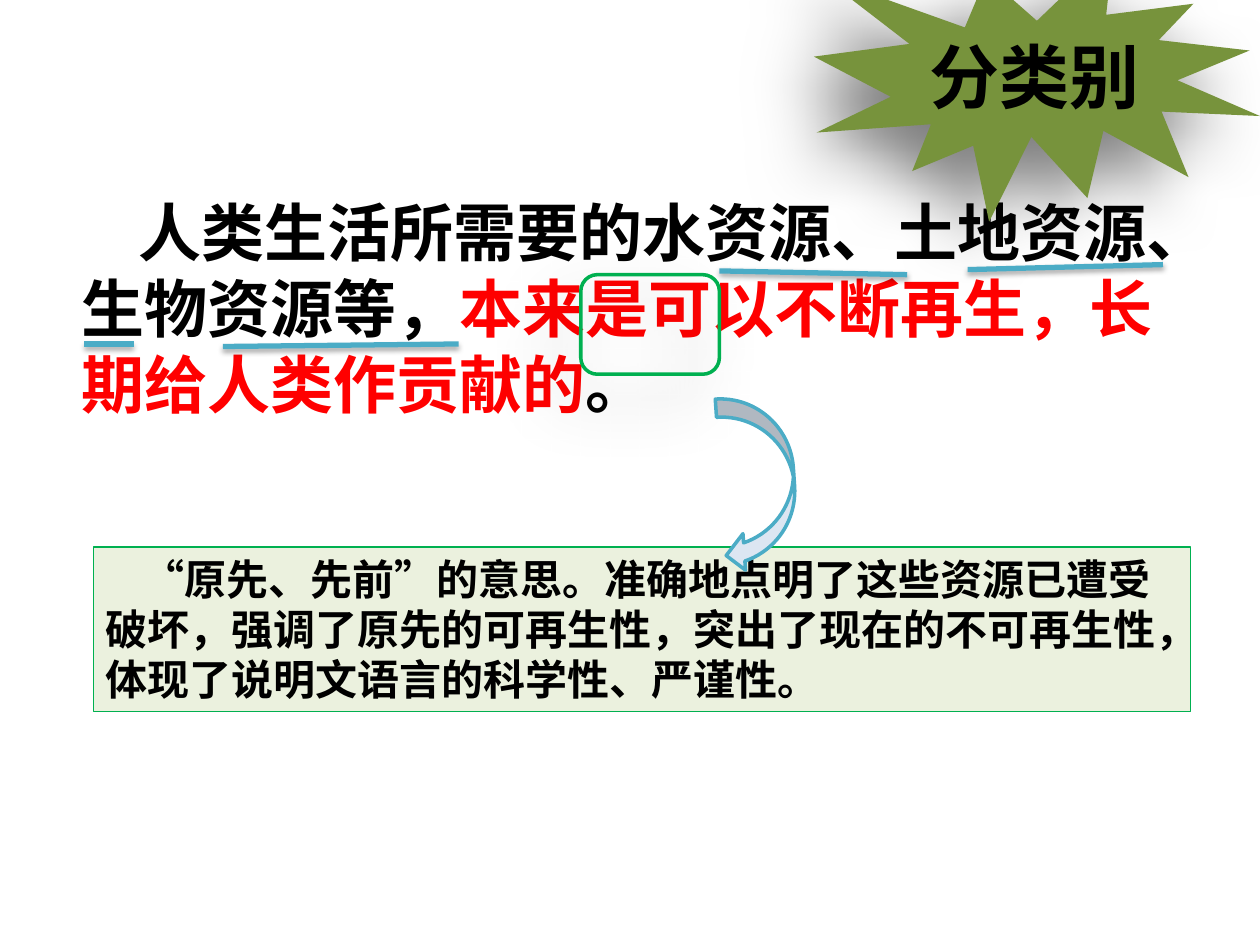
import pptx
import pptx.dml.color
import pptx.enum.lang
import pptx.enum.shapes
import pptx.enum.text
import pptx.oxml
import pptx.oxml.ns
import pptx.util

Inches = pptx.util.Inches
Pt = pptx.util.Pt
RGB = pptx.dml.color.RGBColor
Shape = pptx.enum.shapes.MSO_SHAPE
Align = pptx.enum.text.PP_ALIGN
Anchor = pptx.enum.text.MSO_ANCHOR
qn = pptx.oxml.ns.qn

BLACK = RGB(0x00, 0x00, 0x00)
RED = RGB(0xFF, 0x00, 0x00)
GREEN = RGB(0x00, 0xB0, 0x50)
OLIVE = RGB(0x77, 0x93, 0x3C)
PALE = RGB(0xEB, 0xF1, 0xDE)
TEAL = RGB(0x4B, 0xAC, 0xC6)
ICE = RGB(0xDC, 0xE6, 0xF2)

# Shadows: opacity in percent, blur and distance in points, angle in degrees
DEEP = (50, 35, 20, 135)
SOFT = (35, 3.1, 1.8, 90)


class Deck:
    font = "Noto Sans CJK SC"

    def __init__(self, slide):
        self.slide = slide

    def shade(self, item, look=None):
        """Replace the theme shadow with the given one, or with none."""
        props = item._element.spPr
        for old in props.findall(qn("a:effectLst")):
            props.remove(old)
        effects = pptx.oxml.parse_xml(
            "<a:effectLst %s/>" % pptx.oxml.ns.nsdecls("a"))
        props.append(effects)
        if look:
            alpha, blur, dist, angle = look
            effects.append(pptx.oxml.parse_xml(
                '<a:outerShdw %s blurRad="%d" dist="%d" dir="%d" '
                'algn="t" rotWithShape="0"><a:srgbClr val="000000">'
                '<a:alpha val="%d"/></a:srgbClr></a:outerShdw>' % (
                    pptx.oxml.ns.nsdecls("a"), Pt(blur), Pt(dist),
                    angle * 60000, alpha * 1000)))

    def shape(self, kind, box, fill=None, line=None, width=1, look=None):
        item = self.slide.shapes.add_shape(kind, *map(Inches, box))
        if fill is None:
            item.fill.background()
        else:
            item.fill.solid()
            item.fill.fore_color.rgb = fill
        if line is None:
            item.line.fill.background()
        else:
            item.line.color.rgb = line
            item.line.width = Pt(width)
        self.shade(item, look)
        return item

    def stroke(self, start, end):
        ends = map(Inches, start + end)
        item = self.slide.shapes.add_connector(
            pptx.enum.shapes.MSO_CONNECTOR.STRAIGHT, *ends)
        item.line.color.rgb = TEAL
        item.line.width = Pt(3)
        self.shade(item, SOFT)

    def box(self, place):
        return self.slide.shapes.add_textbox(*map(Inches, place))

    def label(self, item, runs, size, indent=0, align=Align.LEFT,
              anchor=Anchor.TOP):
        frame = item.text_frame
        frame.word_wrap = True
        frame.vertical_anchor = anchor
        para = frame.paragraphs[0]
        para.alignment = align
        if indent:
            para._p.get_or_add_pPr().set("indent", str(Inches(indent)))
        for text, color in runs:
            run = para.add_run()
            run.text = text
            font = run.font
            font.size = Pt(size)
            font.bold = True
            font.color.rgb = color
            font.name = self.font
            font.language_id = (
                pptx.enum.lang.MSO_LANGUAGE_ID.SIMPLIFIED_CHINESE)
            east = pptx.oxml.parse_xml('<a:ea %s typeface="%s"/>' % (
                pptx.oxml.ns.nsdecls("a"), self.font))
            run._r.rPr.find(qn("a:latin")).addnext(east)


def main():
    show = pptx.Presentation()
    show.slide_width = Inches(10)
    show.slide_height = Inches(7.5)
    deck = Deck(show.slides.add_slide(show.slide_layouts[6]))

    note = deck.shape(Shape.RECTANGLE, (0.74, 4.34, 8.71, 1.31),
                      PALE, GREEN, 0.75)
    deck.label(note, [(
        "“原先、先前”的意思。准确地点明了这些资源已遭受破坏，"
        "强调了原先的可再生性，突出了现在的不可再生性，"
        "体现了说明文语言的科学性、严谨性。", BLACK)], 24, indent=0.29)

    quote = deck.box((0.55, 1.49, 8.9, 1.92))
    deck.label(quote, [
        ("人类生活所需要的水资源、土地资源、生物资源等，", BLACK),
        ("本来是可以不断再生，长期给人类作贡献的", RED),
        ("。", BLACK)], 36, indent=0.45)

    burst = deck.shape(Shape.EXPLOSION1, (6.46, -0.42, 3.54, 2.18),
                       OLIVE, look=DEEP)
    deck.label(burst, [("分类别", BLACK)], 40, align=Align.CENTER,
               anchor=Anchor.MIDDLE)

    for start, end in (
            ((5.71, 2.15), (7.2, 2.18)),
            ((7.68, 2.14), (9.23, 2.1)),
            ((1.77, 2.75), (3.64, 2.73)),
            ((0.67, 2.73), (1.06, 2.73))):
        deck.stroke(start, end)

    deck.shape(Shape.ROUNDED_RECTANGLE, (4.61, 2.18, 1.1, 0.79),
               line=GREEN, width=2, look=DEEP)

    arrow = deck.shape(Shape.CURVED_UP_ARROW, (5.32, 3.55, 1.39, 0.58),
                       ICE, TEAL, 2)
    arrow.rotation = 86
    arrow._element.spPr.find(qn("a:xfrm")).set("flipV", "1")

    show.save("out.pptx")


if __name__ == "__main__":
    main()
